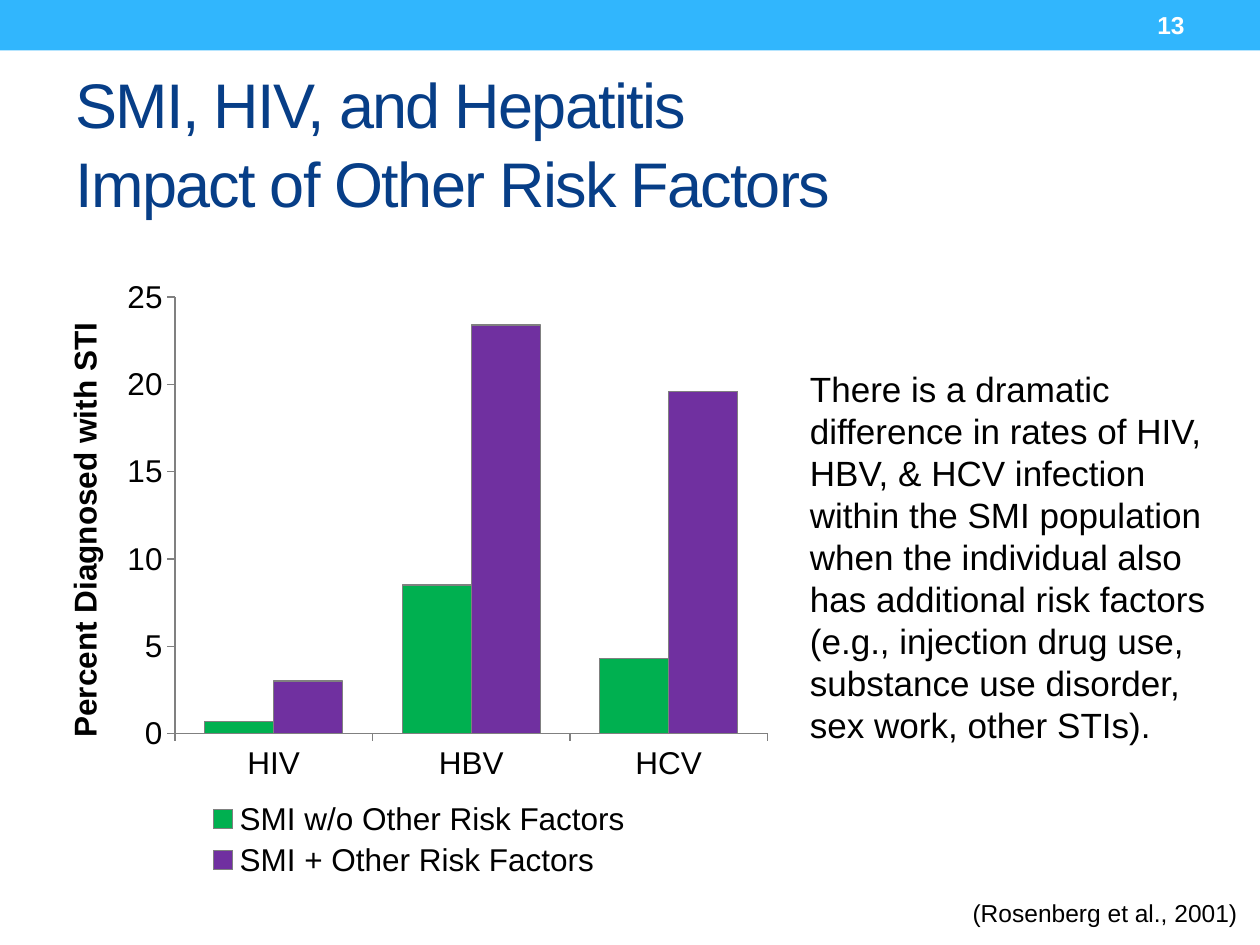
import pptx
import pptx.chart.data
import pptx.dml.color
import pptx.enum.chart
import pptx.enum.shapes
import pptx.enum.text
import pptx.oxml
import pptx.util
from pptx.oxml.ns import nsdecls

Inches = pptx.util.Inches
Pt = pptx.util.Pt
ALIGN = pptx.enum.text.PP_ALIGN
ANCHOR = pptx.enum.text.MSO_ANCHOR
TITLE_ONLY = 5


def color(hex_string):
    return pptx.dml.color.RGBColor.from_string(hex_string)


def format_font(font, rgb, **values):
    font.color.rgb = color(rgb)
    for name, value in values.items():
        setattr(font, name, value)


def set_layout(element, position, inner=False):
    """Place a chart part by fractions (x, y, width, height) of the chart."""
    parts = ['<c:layoutTarget val="inner"/>'] if inner else []
    parts += [f'<c:{name}Mode val="edge"/>' for name in "xy"]
    parts += [f'<c:{name} val="{value}"/>' for name, value in zip("xywh", position)]
    layout = pptx.oxml.parse_xml(
        f'<c:layout {nsdecls("c")}><c:manualLayout>{"".join(parts)}'
        "</c:manualLayout></c:layout>"
    )
    for old in element.findall(layout.tag):
        element.remove(old)
    return layout


class SlideBuilder:
    font_name = "Arial"
    black = "000000"
    gray = "808080"

    def __init__(self, presentation):
        self.slide = presentation.slides.add_slide(
            presentation.slide_layouts[TITLE_ONLY]
        )
        self.shapes = self.slide.shapes

    def band(self, box, fill):
        shape = self.shapes.add_shape(
            pptx.enum.shapes.MSO_SHAPE.RECTANGLE, *map(Inches, box)
        )
        shape.shadow.inherit = False
        shape.fill.solid()
        shape.fill.fore_color.rgb = color(fill)
        shape.line.fill.background()

    def title(self, box, lines, rgb):
        title = self.shapes.title
        for name, value in zip(("left", "top", "width", "height"), box):
            setattr(title, name, Inches(value))
        frame = title.text_frame
        frame.auto_size = pptx.enum.text.MSO_AUTO_SIZE.NONE
        frame.vertical_anchor = ANCHOR.MIDDLE
        paragraph = frame.paragraphs[0]
        paragraph.alignment = ALIGN.LEFT
        paragraph.line_spacing = 1.05
        for index, line in enumerate(lines):
            if index:
                paragraph.add_line_break()
            run = paragraph.add_run()
            run.text = line
            format_font(run.font, rgb, name=self.font_name, size=Pt(36))
            run.font._element.set("spc", "-100")

    def text(self, box, text, size, rgb=black, align=ALIGN.LEFT,
             anchor=ANCHOR.TOP, bold=False):
        frame = self.shapes.add_textbox(*map(Inches, box)).text_frame
        frame.word_wrap = True
        frame.vertical_anchor = anchor
        paragraph = frame.paragraphs[0]
        paragraph.alignment = align
        run = paragraph.add_run()
        run.text = text
        format_font(run.font, rgb, name=self.font_name, size=Pt(size), bold=bold)

    def column_chart(self, box, categories, series, axis_title):
        """Draw clustered columns; series holds (name, values, colour)."""
        data = pptx.chart.data.CategoryChartData()
        data.categories = categories
        for name, values, _ in series:
            data.add_series(name, values)
        chart = self.shapes.add_chart(
            pptx.enum.chart.XL_CHART_TYPE.COLUMN_CLUSTERED, *map(Inches, box), data
        ).chart
        format_font(chart.font, self.black, name=self.font_name, size=Pt(18))
        chart.has_title = False

        plot = chart.plots[0]
        plot.gap_width = 86
        plot.overlap = 0
        plot.vary_by_categories = False
        for column, (_, _, fill) in zip(plot.series, series):
            column.format.fill.solid()
            column.format.fill.fore_color.rgb = color(fill)
            self.outline(column.format.line)

        for axis in (chart.category_axis, chart.value_axis):
            axis.has_major_gridlines = False
            axis.major_tick_mark = pptx.enum.chart.XL_TICK_MARK.OUTSIDE
            self.outline(axis.format.line)
        value_axis = chart.value_axis
        for name, value in {"minimum_scale": 0, "maximum_scale": 25,
                            "major_unit": 5}.items():
            setattr(value_axis, name, value)
        value_axis.has_title = True
        run = value_axis.axis_title.text_frame.paragraphs[0].add_run()
        run.text = axis_title
        format_font(run.font, self.black, name=self.font_name, size=Pt(18), bold=True)

        chart.has_legend = True
        legend = chart.legend
        legend.position = pptx.enum.chart.XL_LEGEND_POSITION.BOTTOM
        legend.include_in_layout = False
        legend_xml = legend._element
        layout = set_layout(legend_xml, (0.21, 0.85, 0.6, 0.14))
        legend_xml.find(pptx.oxml.ns.qn("c:legendPos")).addnext(layout)
        plot_area = chart._chartSpace.chart.plotArea
        plot_area.insert(0, set_layout(plot_area, (0.18, 0.05, 0.8, 0.7), inner=True))

    def outline(self, line):
        line.color.rgb = color(self.gray)
        line.width = Pt(0.75)


def main():
    presentation = pptx.Presentation()
    presentation.slide_width = Inches(10)
    presentation.slide_height = Inches(7.5)
    builder = SlideBuilder(presentation)

    builder.band((0, 0, 10, 0.4), "31B6FD")
    builder.title(
        (0.5, 0.58, 9, 1.08),
        ("SMI, HIV, and Hepatitis", "Impact of Other Risk Factors"),
        "073E87",
    )
    builder.column_chart(
        (0.33, 2.11, 5.88, 4.95),
        ("HIV", "HBV", "HCV"),
        (
            ("SMI w/o Other Risk Factors", (0.7, 8.5, 4.3), "00B050"),
            ("SMI + Other Risk Factors", (3, 23.4, 19.6), "7030A0"),
        ),
        "Percent Diagnosed with STI",
    )
    builder.text(
        (6.33, 2.87, 3.5, 3.13),
        "There is a dramatic difference in rates of HIV, HBV, & HCV infection "
        "within the SMI population when the individual also has additional risk "
        "factors (e.g., injection drug use, substance use disorder, sex work, "
        "other STIs).",
        20,
    )
    builder.text((7.25, 7.08, 2.67, 0.34), "(Rosenberg et al., 2001)", 14,
                 align=ALIGN.RIGHT)
    builder.text((8.33, 0.02, 1.17, 0.36), "13", 14, "FFFFFF", ALIGN.RIGHT,
                 ANCHOR.MIDDLE, bold=True)
    presentation.save("out.pptx")


if __name__ == "__main__":
    main()
